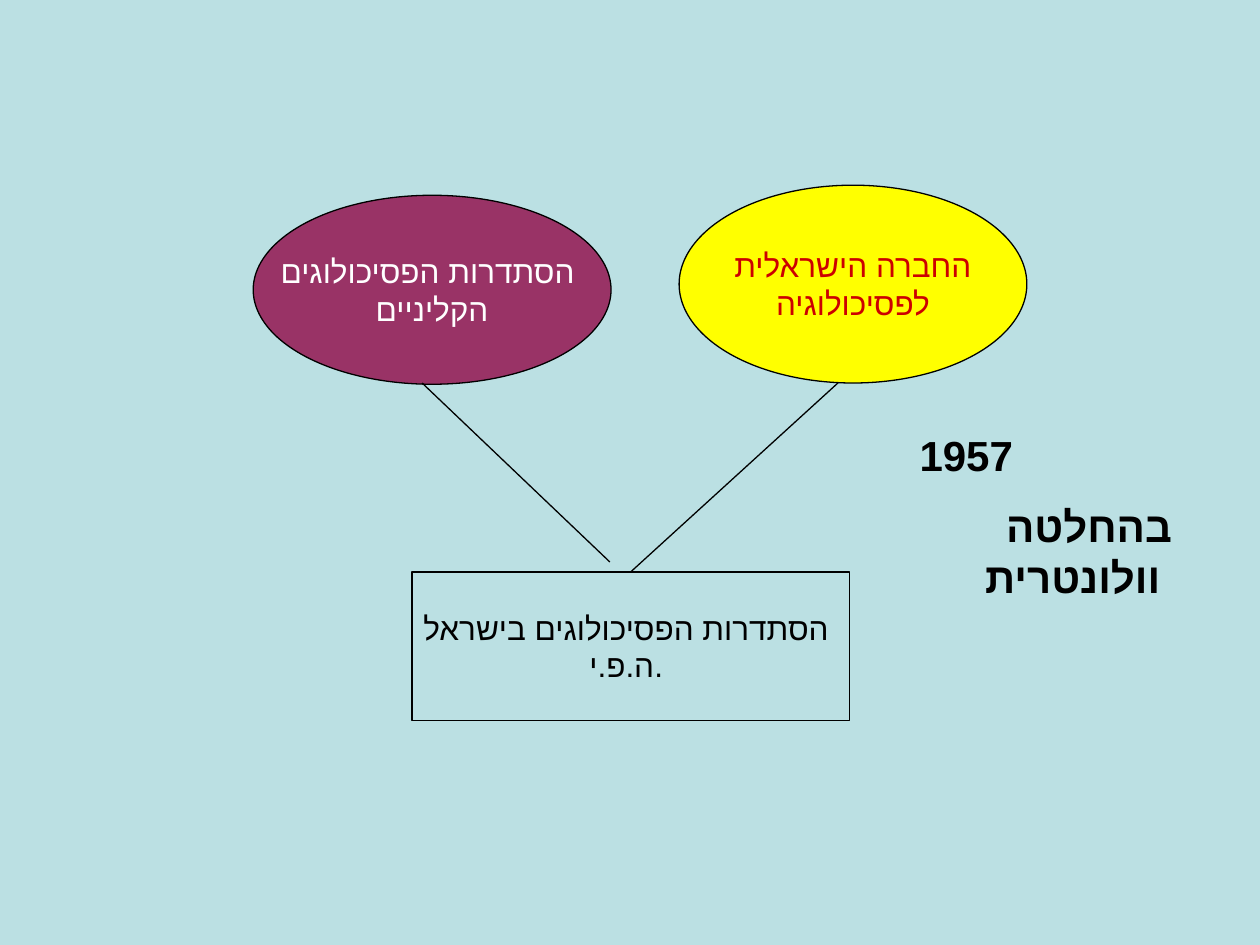
from lxml import etree
from pptx import Presentation
from pptx.dml.color import RGBColor
from pptx.enum.shapes import MSO_CONNECTOR, MSO_SHAPE
from pptx.enum.text import MSO_ANCHOR, MSO_AUTO_SIZE, PP_ALIGN
from pptx.oxml.ns import qn
from pptx.util import Inches, Pt

OVAL, RECT = MSO_SHAPE.OVAL, MSO_SHAPE.RECTANGLE
LEFT, CENTER, RIGHT = PP_ALIGN.LEFT, PP_ALIGN.CENTER, PP_ALIGN.RIGHT

PALE = RGBColor(0xBB, 0xE0, 0xE3)
YELLOW = RGBColor(0xFF, 0xFF, 0x00)
PLUM = RGBColor(0x99, 0x33, 0x66)
RED = RGBColor(0xCC, 0x00, 0x00)
WHITE = RGBColor(0xFF, 0xFF, 0xFF)
BLACK = RGBColor(0x00, 0x00, 0x00)
FONT = "Arial"
LINE_WIDTH = Pt(0.75)

# kind, (left, top, width, height), fill, text colour, lines
BODIES = [
    (OVAL, (5.39, 1.47, 2.76, 1.57), YELLOW, RED,
     ["החברה הישראלית", "לפסיכולוגיה"]),
    (OVAL, (2.01, 1.55, 2.84, 1.5), PLUM, WHITE,
     ["הסתדרות הפסיכולוגים ", "הקליניים"]),
    (RECT, (3.27, 4.54, 3.47, 1.18), PALE, BLACK,
     ["הסתדרות הפסיכולוגים בישראל ", "ה.פ.י. "]),
]
# start, end
LINKS = [((6.65, 3.04), (5, 4.54)), ((3.35, 3.04), (4.84, 4.46))]
NOTE_BOX = (7.2, 3.36, 2.2, 1.5)
NOTE = [("1957", LEFT), ("בהחלטה וולונטרית ", RIGHT)]


def inches(values):
    return [Inches(v) for v in values]


def write(tf, paragraphs, space_before=Pt(0), **font):
    """Fill a text frame with (text, alignment) paragraphs in one font."""
    for i, (text, align) in enumerate(paragraphs):
        p = tf.paragraphs[0] if i == 0 else tf.add_paragraph()
        p.alignment, p.space_before = align, space_before
        r = p.add_run()
        r.text = text
        r.font.name = FONT
        r.font.color.rgb = font["color"]
        for name in ("size", "bold"):
            setattr(r.font, name, font.get(name))
        # Hebrew takes its typeface from the complex-script entry
        cs = etree.SubElement(r.font._element, qn("a:cs"))
        cs.set("typeface", FONT)


def add_body(slide, kind, box, fill, color, lines):
    sp = slide.shapes.add_shape(kind, *inches(box))
    sp.shadow.inherit = False
    sp.fill.solid()
    sp.fill.fore_color.rgb = fill
    sp.line.color.rgb = BLACK
    sp.line.width = LINE_WIDTH
    tf = sp.text_frame
    tf.word_wrap = False
    tf.vertical_anchor = MSO_ANCHOR.MIDDLE
    write(tf, [(line, CENTER) for line in lines], size=Pt(18), color=color)
    return sp


def add_link(slide, start, end):
    link = slide.shapes.add_connector(MSO_CONNECTOR.STRAIGHT, *inches(start + end))
    link.line.color.rgb = BLACK
    link.line.width = LINE_WIDTH
    etree.SubElement(link._element.spPr, qn("a:effectLst"))
    return link


def main():
    prs = Presentation()
    prs.slide_width, prs.slide_height = Inches(10), Inches(7.5)
    slide = prs.slides.add_slide(prs.slide_layouts[6])
    slide.background.fill.solid()
    slide.background.fill.fore_color.rgb = PALE

    society, clinicians, association = [add_body(slide, *body) for body in BODIES]
    society_link, clinicians_link = [add_link(slide, *ends) for ends in LINKS]
    society_link.end_connect(association, 0)

    tf = slide.shapes.add_textbox(*inches(NOTE_BOX)).text_frame
    tf.word_wrap = True
    tf.auto_size = MSO_AUTO_SIZE.SHAPE_TO_FIT_TEXT
    write(tf, NOTE, space_before=Pt(12), size=Pt(24), bold=True, color=BLACK)
    prs.save("out.pptx")


if __name__ == "__main__":
    main()
